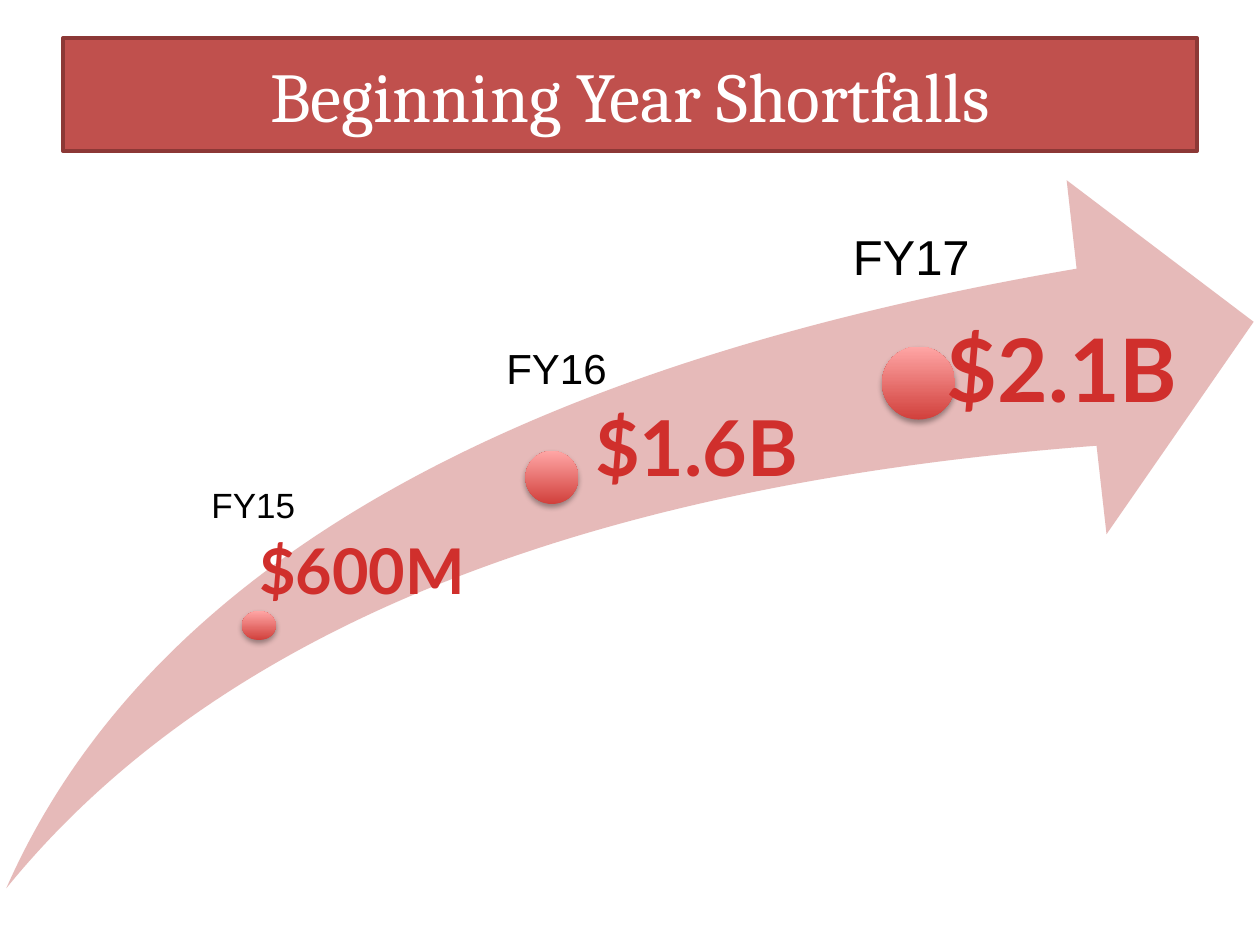
"""Build a slide showing beginning-year shortfalls growing along a swoosh arrow."""
import pptx
import pptx.dml.color
import pptx.enum.shapes
import pptx.enum.text
import pptx.oxml
import pptx.oxml.ns
import pptx.util

Inches = pptx.util.Inches
ALIGN = pptx.enum.text.PP_ALIGN
ANCHOR = pptx.enum.text.MSO_ANCHOR
SHAPE = pptx.enum.shapes.MSO_SHAPE
DRAWING = pptx.oxml.ns.nsdecls("a")


def color(value):
    """Turn a hex string into an RGB colour."""
    return pptx.dml.color.RGBColor.from_string(value)


def place(shape, left, top, width, height):
    """Move and size a shape, in inches."""
    shape.left, shape.top = Inches(left), Inches(top)
    shape.width, shape.height = Inches(width), Inches(height)


def add_span(para, text, font, size, value, bold=False):
    """Add one formatted run to a paragraph."""
    span = para.add_run()
    span.text = text
    span.font.name = font
    span.font.size = pptx.util.Pt(size)
    span.font.bold = bold
    span.font.color.rgb = color(value)


def add_title(page, text):
    """Format the title placeholder as a red banner."""
    title = page.shapes.title
    place(title, 0.5, 0.3, 9, 0.9)
    title.fill.solid()
    title.fill.fore_color.rgb = color("C0504D")
    title.line.color.rgb = color("8C3836")
    title.line.width = pptx.util.Pt(2)
    title.text_frame.vertical_anchor = ANCHOR.MIDDLE
    para = title.text_frame.paragraphs[0]
    para.alignment = ALIGN.CENTER
    add_span(para, text, "Cambria", 40, "FFFFFF")


def add_shape(page, kind, at):
    """Add a preset shape without outline or shadow."""
    shape = page.shapes.add_shape(kind, *map(Inches, at))
    shape.shadow.inherit = False
    shape.line.fill.background()
    return shape


def add_arrow(page):
    """Add the translucent swoosh arrow."""
    arrow = add_shape(page, SHAPE.SWOOSH_ARROW, (0.05, 1.43, 9.9, 5.62))
    arrow.adjustments[0] = arrow.adjustments[1] = 0.25
    arrow.fill.solid()
    arrow.fill.fore_color.rgb = color("D99694")
    tint = arrow.fill._xPr.find(".//" + pptx.oxml.ns.qn("a:srgbClr"))
    tint.append(pptx.oxml.parse_xml(f'<a:alpha {DRAWING} val="65000"/>'))


def add_dot(page, at):
    """Add a gradient dot with a soft shadow."""
    dot = add_shape(page, SHAPE.OVAL, at)
    dot.fill.gradient()
    dot.fill.gradient_angle = 90
    for stop, value in zip(dot.fill.gradient_stops, ("D1403C", "FFA6A5")):
        stop.color.rgb = color(value)
    effects = dot._element.spPr.find(pptx.oxml.ns.qn("a:effectLst"))
    effects.append(pptx.oxml.parse_xml(
        f'<a:outerShdw {DRAWING} blurRad="40000" dist="23000" dir="5400000" rotWithShape="0">'
        '<a:srgbClr val="000000"><a:alpha val="35000"/></a:srgbClr></a:outerShdw>'))


def add_amount(page, text, at, size, inset):
    """Add a bold red amount, inset from the left."""
    box = page.shapes.add_textbox(*map(Inches, at))
    frame = box.text_frame
    frame.word_wrap = True
    frame.margin_left = Inches(inset)
    frame.margin_top = frame.margin_right = frame.margin_bottom = 0
    para = frame.paragraphs[0]
    para.alignment = ALIGN.CENTER
    add_span(para, text, "Lato", size, "D02F2C", bold=True)


def add_year(page, text, at, size):
    """Add a fiscal year label."""
    box = page.shapes.add_textbox(*map(Inches, at))
    box.text_frame.word_wrap = True
    box.text_frame.auto_size = pptx.enum.text.MSO_AUTO_SIZE.SHAPE_TO_FIT_TEXT
    add_span(box.text_frame.paragraphs[0], text, "Arial", size, "000000")


def main():
    """Build and save the deck."""
    deck = pptx.Presentation()
    deck.slide_width, deck.slide_height = Inches(10), Inches(7.5)
    page = deck.slides.add_slide(deck.slide_layouts[5])
    add_title(page, "Beginning Year Shortfalls")
    add_arrow(page)
    milestones = [
        ((1.92, 4.85, 0.27, 0.23),
         ("$600M", (1.83, 4.22, 1.97, 0.67), 36, 0.12),
         ("FY15", (1.58, 3.79, 0.87, 0.44), 20)),
        ((4.17, 3.58, 0.42, 0.42),
         ("$1.6B", (4.5, 3.17, 1.84, 0.92), 44, 0.22),
         ("FY16", (3.92, 2.67, 1.33, 0.5), 24)),
        ((7, 2.75, 0.58, 0.58),
         ("$2.1B", (7.05, 2.5, 2.45, 0.89), 50, 0.31),
         ("FY17", (6.67, 1.75, 1.76, 0.57), 28)),
    ]
    for dot, amount, year in milestones:
        add_dot(page, dot)
        add_amount(page, *amount)
        add_year(page, *year)
    deck.save("out.pptx")


if __name__ == "__main__":
    main()
